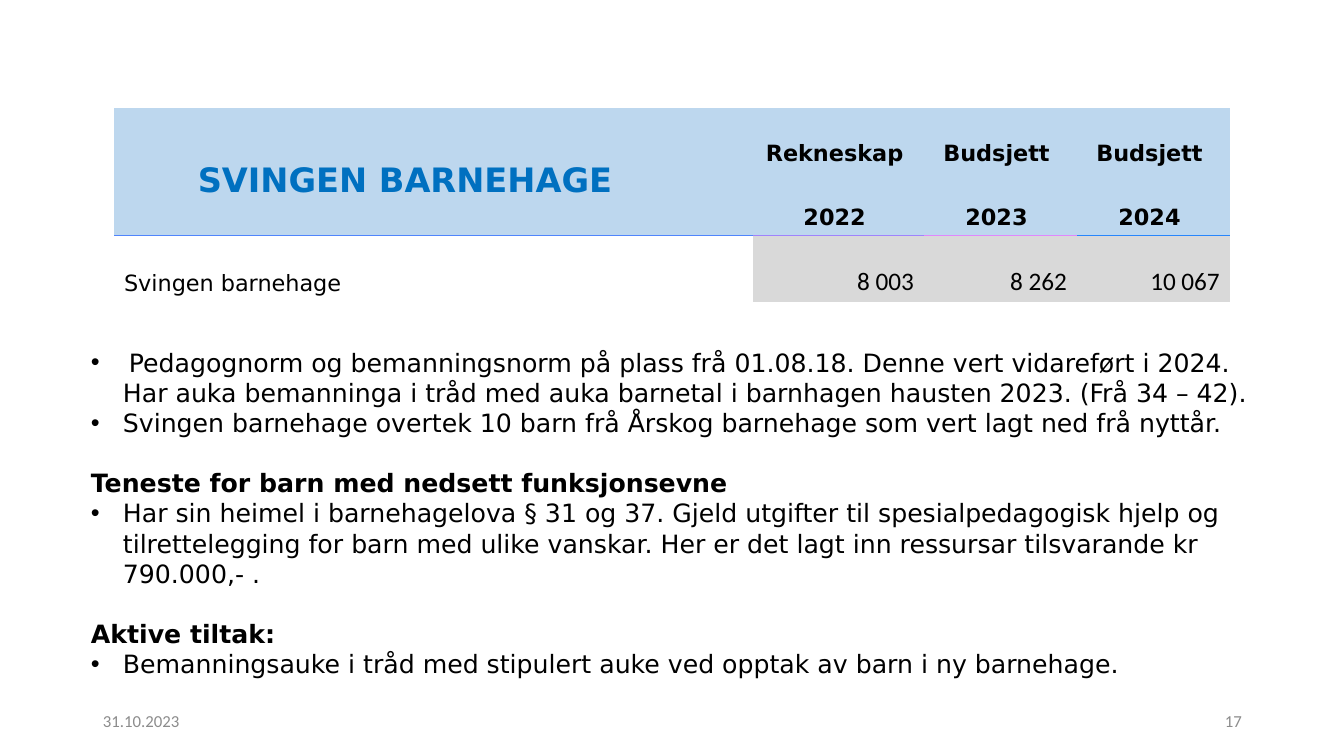
from lxml import etree
from pptx import Presentation
from pptx.dml.color import RGBColor
from pptx.enum.text import MSO_ANCHOR, MSO_AUTO_SIZE, PP_ALIGN
from pptx.oxml.ns import qn
from pptx.util import Emu, Pt

LEFT, CENTER, RIGHT = PP_ALIGN.LEFT, PP_ALIGN.CENTER, PP_ALIGN.RIGHT
TOP, MIDDLE, BOTTOM = MSO_ANCHOR.TOP, MSO_ANCHOR.MIDDLE, MSO_ANCHOR.BOTTOM
NO_AUTOSIZE = MSO_AUTO_SIZE.NONE
PLAIN_TABLE = "{2D5ABB26-0587-4C30-8999-92F81FD0307C}"
EMU_PER_PX = 914400 / 100.8
TITLE_ONLY = 5


def px(n):
    return Emu(round(n * EMU_PER_PX))


def rgb(color):
    return RGBColor.from_string(color)


class BudgetSlide:
    font, black, grey, blue = "DejaVu Sans", "000000", "8C8C8C", "0070C0"
    header_fill, value_fill = "BDD7EE", "D9D9D9"

    def __init__(self, prs):
        self.s = prs.slides.add_slide(prs.slide_layouts[TITLE_ONLY])

    def run(self, p, text, size, color=black, font=font, bold=False):
        r = p.add_run()
        r.text = text
        r.font.size, r.font.name, r.font.bold = Pt(size), font, bold
        r.font.color.rgb = rgb(color)

    def frame(self, sp, anchor):
        tf = sp.text_frame
        tf.word_wrap = True
        tf.auto_size = NO_AUTOSIZE
        tf.vertical_anchor = anchor
        return tf

    def title(self, text, x, y, w, h):
        sp = self.s.shapes.title
        sp.left, sp.top, sp.width, sp.height = px(x), px(y), px(w), px(h)
        p = self.frame(sp, TOP).paragraphs[0]
        p.alignment = CENTER
        self.run(p, text, 24, self.blue, bold=True)
        # Bring the title in front of the table
        sp.element.getparent().append(sp.element)

    def textbox(self, x, y, w, h, anchor=TOP):
        sp = self.s.shapes.add_textbox(px(x), px(y), px(w), px(h))
        return self.frame(sp, anchor)

    def footer(self, text, x, align):
        p = self.textbox(x, 701, 302, 40, MIDDLE).paragraphs[0]
        p.alignment = align
        self.run(p, text, 12, self.grey, "Calibri")

    def body(self, items, x, y, w, h):
        tf = self.textbox(x, y, w, h)
        for i, (text, kind, indent) in enumerate(items):
            p = tf.add_paragraph() if i else tf.paragraphs[0]
            pPr = p._p.get_or_add_pPr()
            pPr.set("marL", str(px(indent)))
            pPr.set("indent", str(px(-indent if kind == "bullet" else 0)))
            if kind == "bullet":
                etree.SubElement(pPr, qn("a:buFont")).set("typeface", "Arial")
                etree.SubElement(pPr, qn("a:buChar")).set("char", "•")
            p.line_spacing = Pt(21.55)
            if kind == "heading":
                p.space_before = Pt(21.55)
            self.run(p, text, 18, bold=kind == "heading")

    def table(self, x, y, widths, heights):
        sp = self.s.shapes.add_table(len(heights), len(widths), px(x), px(y),
                                     px(sum(widths)), px(sum(heights)))
        table = sp.table
        table.first_row = table.horz_banding = False
        table._tbl.tblPr.find(qn("a:tableStyleId")).text = PLAIN_TABLE
        for col, w in zip(table.columns, widths):
            col.width = px(w)
        for row, h in zip(table.rows, heights):
            row.height = px(h)
        return table

    def cell(self, cell, text, align, fill=None, **style):
        cell.vertical_anchor = BOTTOM
        if fill:
            cell.fill.solid()
            cell.fill.fore_color.rgb = rgb(fill)
        else:
            cell.fill.background()
        if text:
            p = cell.text_frame.paragraphs[0]
            p.alignment = align
            self.run(p, text, **style)

    def border(self, cell, side, color):
        ln = etree.Element(qn("a:" + side), w=str(Pt(0.75)))
        fill = etree.SubElement(ln, qn("a:solidFill"))
        etree.SubElement(fill, qn("a:srgbClr")).set("val", color)
        cell._tc.get_or_add_tcPr().insert(0, ln)


HEADERS = [
    ["", "Rekneskap ", "Budsjett ", "Budsjett "],
    ["", "2022 ", "2023 ", "2024 "],
]
VALUES = ["Svingen barnehage ", "8 003", "8 262", "10 067"]
RULE_COLORS = ["5085FC", "A083FC", "E088FC", "2886FC"]

BODY = [
    ("Pedagognorm og bemanningsnorm på plass frå 01.08.18. Denne vert "
     "vidareført i 2024.", "bullet", 38),
    ("Har auka bemanninga i tråd med auka barnetal i barnhagen hausten 2023. "
     "(Frå 34 – 42).", "plain", 32),
    ("Svingen barnehage overtek 10 barn frå Årskog barnehage som vert lagt "
     "ned frå nyttår.", "bullet", 32),
    ("Teneste for barn med nedsett funksjonsevne", "heading", 0),
    ("Har sin heimel i barnehagelova § 31 og 37. Gjeld utgifter til "
     "spesialpedagogisk hjelp og tilrettelegging for barn med ulike vanskar. "
     "Her er det lagt inn ressursar tilsvarande kr 790.000,- .", "bullet", 32),
    ("Aktive tiltak:", "heading", 0),
    ("Bemanningsauke i tråd med stipulert auke ved opptak av barn i ny "
     "barnehage.", "bullet", 32),
]


def main():
    prs = Presentation()
    prs.slide_width, prs.slide_height = px(1344), px(756)
    slide = BudgetSlide(prs)

    # Footer
    slide.footer("31.10.2023", 93, LEFT)
    slide.footer("17", 950, RIGHT)

    # Body text
    slide.body(BODY, 81, 342, 1219, 408)

    # Budget table
    table = slide.table(114, 108, [639, 171, 153, 153], [64, 64, 66])
    for i, row in enumerate(HEADERS):
        for j, text in enumerate(row):
            slide.cell(table.cell(i, j), text, CENTER, slide.header_fill,
                       size=16, bold=True)
    slide.cell(table.cell(2, 0), VALUES[0], LEFT, size=16)
    for j, value in enumerate(VALUES[1:], start=1):
        slide.cell(table.cell(2, j), value, RIGHT, slide.value_fill,
                   size=18, font="Calibri")
    for j, color in enumerate(RULE_COLORS):
        slide.border(table.cell(1, j), "lnB", color)
        slide.border(table.cell(2, j), "lnT", color)

    # Title
    slide.title("SVINGEN BARNEHAGE", 69, 154, 672, 50)
    prs.save("out.pptx")


if __name__ == "__main__":
    main()
